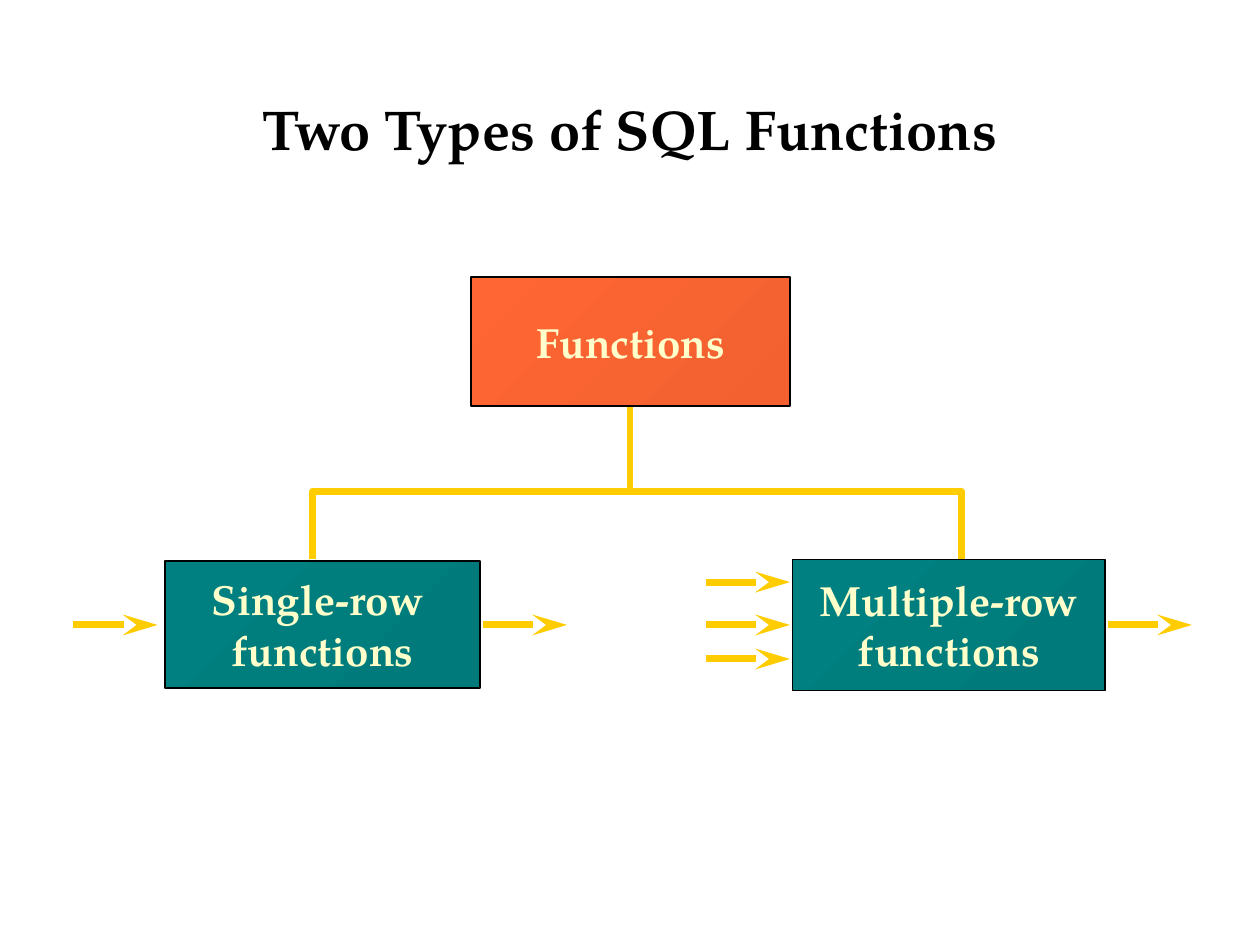
from dataclasses import dataclass

from lxml.etree import SubElement
from pptx import Presentation
from pptx.dml.color import RGBColor
from pptx.enum.shapes import MSO_CONNECTOR, MSO_SHAPE
from pptx.enum.text import MSO_ANCHOR, PP_ALIGN
from pptx.oxml.ns import qn
from pptx.util import Inches, Pt

COLORS = {
    "title": "000000",
    "outline": "000000",
    "label": "FFFFCC",
    "link": "FFCC00",
    "orange": "FF6633",
    "orange_end": "F36131",
    "teal": "008080",
    "teal_end": "007A7A",
}
FONT = "TeX Gyre Pagella"
ARROW_LENGTH = 0.67
ROW_Y = 4.96


@dataclass
class Box:
    left: float
    top: float
    width: float
    height: float
    color: str
    lines: tuple[str, ...]


@dataclass
class Arrow:
    left: float
    y: float


BOXES = [
    Box(3.74, 2.2, 2.53, 1.02, "orange", ("Functions",)),
    Box(1.31, 4.45, 2.5, 1.01, "teal", ("Single-row ", "functions")),
    Box(6.29, 4.44, 2.48, 1.04, "teal", ("Multiple-row", "functions")),
]
ARROWS = [Arrow(left, ROW_Y) for left in (0.58, 3.83, 5.6, 8.79)]
ARROWS += [Arrow(5.6, y) for y in (4.62, 5.23)]
BRANCH = [(2.48, 4.44), (2.48, 3.9), (7.63, 3.9), (7.63, 4.48)]


def color(name: str) -> RGBColor:
    return RGBColor.from_string(COLORS[name])


def style_line(line, name: str, width: float) -> None:
    line.color.rgb = color(name)
    line.width = Pt(width)


def style_paragraph(paragraph, size: int, name: str) -> None:
    paragraph.alignment = PP_ALIGN.CENTER
    font = paragraph.font
    font.name = FONT
    font.size = Pt(size)
    font.bold = True
    font.color.rgb = color(name)


def add_title(slide, text: str) -> None:
    title = slide.shapes.title
    title.left, title.top = Inches(1.01), Inches(0.7)
    title.width, title.height = Inches(7.98), Inches(0.96)
    title.text_frame.text = text
    title.text_frame.vertical_anchor = MSO_ANCHOR.TOP
    style_paragraph(title.text_frame.paragraphs[0], 32, "title")


def add_link(slide, start: tuple[float, float], end: tuple[float, float]):
    connector = slide.shapes.add_connector(
        MSO_CONNECTOR.STRAIGHT, *map(Inches, start + end)
    )
    style_line(connector.line, "link", 4)
    SubElement(connector._element.spPr, qn("a:effectLst"))
    return connector


def add_branch(slide, points: list[tuple[float, float]]) -> None:
    corners = [(Inches(x), Inches(y)) for x, y in points]
    builder = slide.shapes.build_freeform(*corners[0])
    builder.add_line_segments(corners[1:], close=False)
    shape = builder.convert_to_shape()
    shape.shadow.inherit = False
    shape.fill.background()
    style_line(shape.line, "link", 4)
    SubElement(shape.line._get_or_add_ln(), qn("a:round"))


def add_box(slide, box: Box) -> None:
    shape = slide.shapes.add_shape(
        MSO_SHAPE.RECTANGLE,
        *map(Inches, (box.left, box.top, box.width, box.height)),
    )
    shape.shadow.inherit = False
    shape.fill.gradient()
    shape.fill.gradient_angle = 315
    for stop, name in zip(shape.fill.gradient_stops, (box.color, f"{box.color}_end")):
        stop.color.rgb = color(name)
    style_line(shape.line, "outline", 1)
    frame = shape.text_frame
    frame.word_wrap = False
    frame.vertical_anchor = MSO_ANCHOR.MIDDLE
    frame.text = "\n".join(box.lines)
    for paragraph in frame.paragraphs:
        style_paragraph(paragraph, 24, "label")


def add_arrow(slide, arrow: Arrow) -> None:
    end = (arrow.left + ARROW_LENGTH, arrow.y)
    connector = add_link(slide, (arrow.left, arrow.y), end)
    line = connector.line._get_or_add_ln()
    SubElement(line, qn("a:tailEnd"), type="stealth", w="med", len="lg")


def main() -> None:
    presentation = Presentation()
    presentation.slide_width = Inches(10)
    presentation.slide_height = Inches(7.5)
    slide = presentation.slides.add_slide(presentation.slide_layouts[5])
    add_link(slide, (5, 3.92), (5, 3.21))
    add_branch(slide, BRANCH)
    add_title(slide, "Two Types of SQL Functions")
    for box in BOXES:
        add_box(slide, box)
    for arrow in ARROWS:
        add_arrow(slide, arrow)
    presentation.save("out.pptx")


if __name__ == "__main__":
    main()
